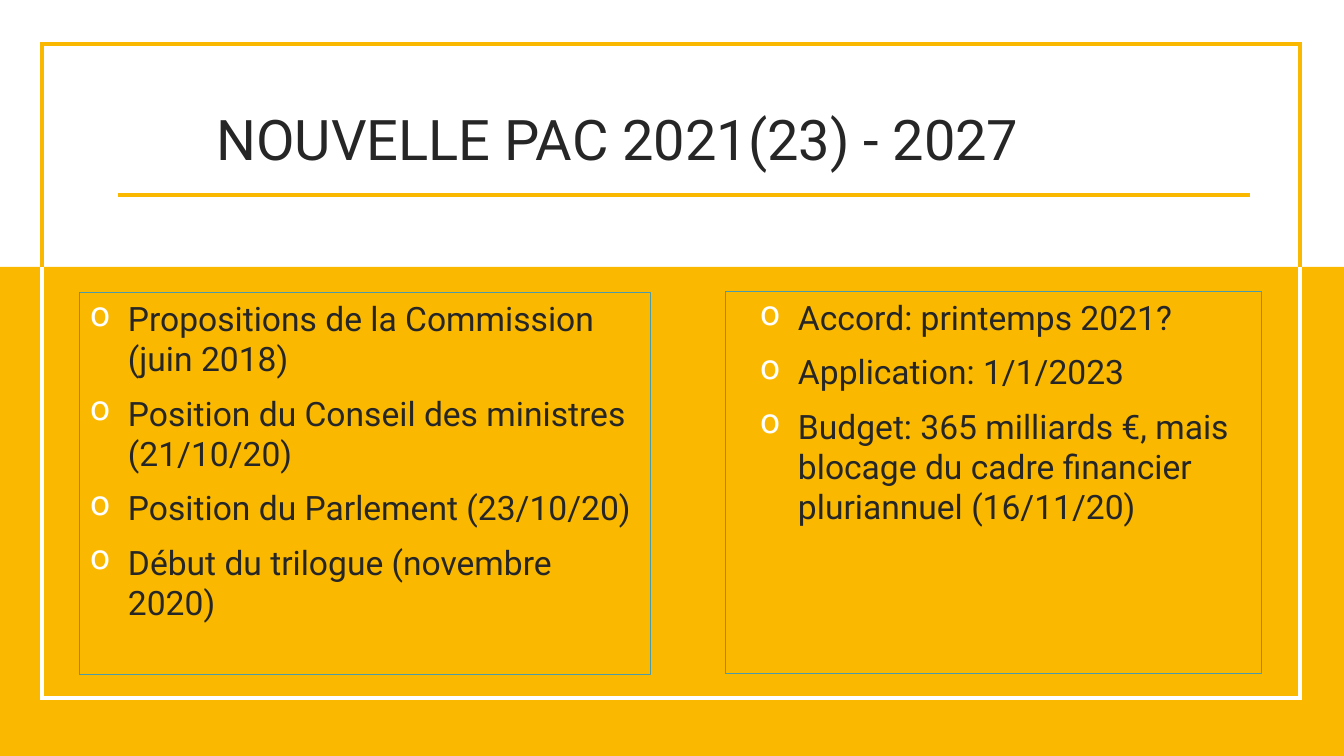
"""Build the slide on the new PAC 2021(23) - 2027."""
from lxml import etree
from pptx import Presentation
from pptx import util as u
from pptx.dml.color import RGBColor
from pptx.enum import shapes, text
from pptx.oxml import ns

PX = 914400 / 100.8
WIDTH, HEIGHT = 1344, 756
GOLD = RGBColor(0xFA, 0xB9, 0x00)
WHITE = RGBColor(0xFF, 0xFF, 0xFF)
INK = RGBColor(0x26, 0x26, 0x26)
TEAL = RGBColor(0x4B, 0x9B, 0xAA)


def px(*lengths):
    return [u.Emu(round(length * PX)) for length in lengths]


def add_text(paragraphs, *, at, size, insets, anchor=text.MSO_ANCHOR.TOP,
             align=text.PP_ALIGN.LEFT, spacing=None, outline=None, bullet=None):
    box = slide.shapes.add_textbox(*px(*at))
    if outline is not None:
        box.line.color.rgb = outline
        box.line.width = u.Pt(0.75)
    frame = box.text_frame
    frame.word_wrap = True
    frame.vertical_anchor = anchor
    (frame.margin_left, frame.margin_top,
     frame.margin_right, frame.margin_bottom) = px(*insets)
    for index, wording in enumerate(paragraphs):
        paragraph = frame.paragraphs[0] if index == 0 else frame.add_paragraph()
        paragraph.alignment = align
        paragraph.line_spacing = spacing
        run = paragraph.add_run()
        run.text = wording
        run.font.name = "Roboto"
        run.font.size = u.Pt(size)
        run.font.color.rgb = INK
        if bullet:
            paragraph.space_before = u.Pt(10)
            indent = px(38)[0]
            properties = paragraph._p.get_or_add_pPr()
            properties.set("marL", str(indent))
            properties.set("indent", str(-indent))
            bullet_color = etree.SubElement(properties, ns.qn("a:buClr"))
            etree.SubElement(bullet_color, ns.qn("a:srgbClr"), val=str(WHITE))
            etree.SubElement(properties, ns.qn("a:buChar"), char=bullet)


deck = Presentation()
deck.slide_width, deck.slide_height = px(WIDTH, HEIGHT)
slide = deck.slides.add_slide(deck.slide_layouts[6])

BAND_TOP = 267
band = slide.shapes.add_shape(
    shapes.MSO_SHAPE.RECTANGLE, *px(0, BAND_TOP, WIDTH, HEIGHT - BAND_TOP))
band.shadow.inherit = False
band.fill.solid()
band.fill.fore_color.rgb = GOLD
band.line.fill.background()

add_text(["NOUVELLE PAC 2021(23) - 2027"], at=(89, 44, 1057, 149), size=40,
         insets=(20, 20, 20, 20), anchor=text.MSO_ANCHOR.BOTTOM,
         align=text.PP_ALIGN.CENTER, spacing=0.9)

LEFT, RIGHT, TOP, BOTTOM = 42, 1300, 44, 698
rules = [(118, 195, 1250, 195, GOLD)]
for edge, color in ((TOP, GOLD), (BOTTOM, WHITE)):
    outer = edge - 2 if edge == TOP else edge + 2
    rules += [(side, BAND_TOP, side, outer, color) for side in (LEFT, RIGHT)]
    rules.append((LEFT, edge, RIGHT, edge, color))
for *ends, color in rules:
    rule = slide.shapes.add_connector(shapes.MSO_CONNECTOR.STRAIGHT, *px(*ends))
    rule.line.color.rgb = color
    rule.line.width = u.Pt(2.5)
    etree.SubElement(rule._element.spPr, ns.qn("a:effectLst"))

progress = [
    "Propositions de la Commission (juin 2018)",
    "Position du Conseil des ministres (21/10/20)",
    "Position du Parlement (23/10/20)",
    "Début du trilogue (novembre 2020)",
]
outlook = [
    "Accord: printemps 2021?",
    "Application: 1/1/2023",
    "Budget: 365 milliards €, mais blocage du cadre financier pluriannuel (16/11/20)",
]
for points, at, left_inset in ((progress, (80, 293, 571, 382), 10),
                               (outlook, (726, 292, 536, 382), 34)):
    add_text(points, at=at, size=24, insets=(left_inset, 5, 10, 5),
             outline=TEAL, bullet="o")

deck.save("out.pptx")
